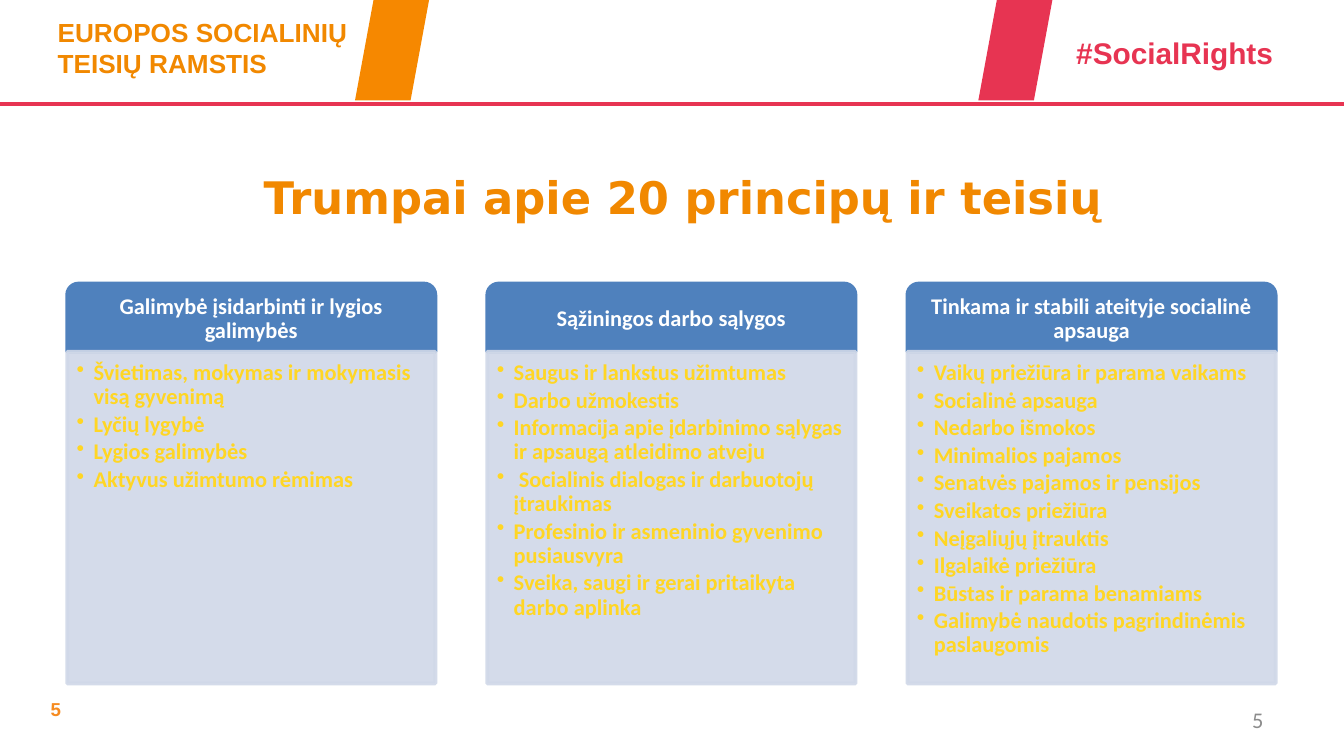
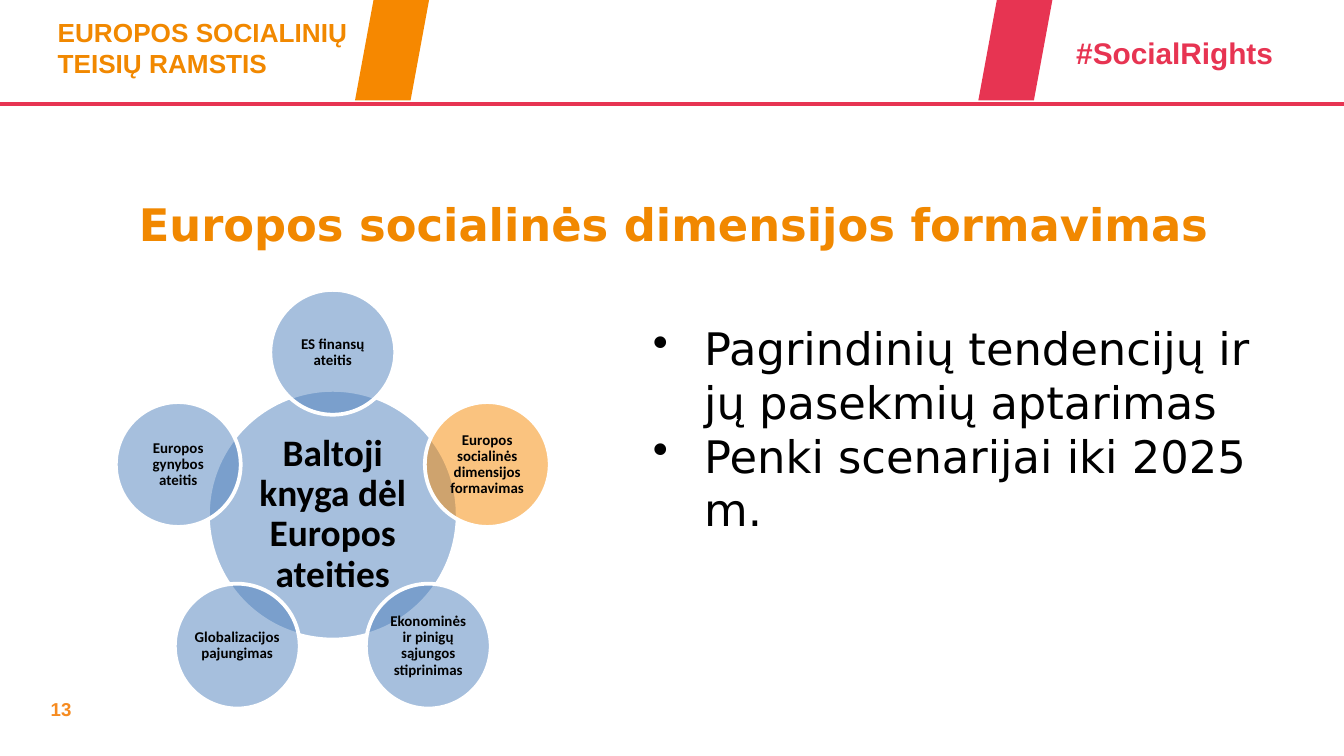
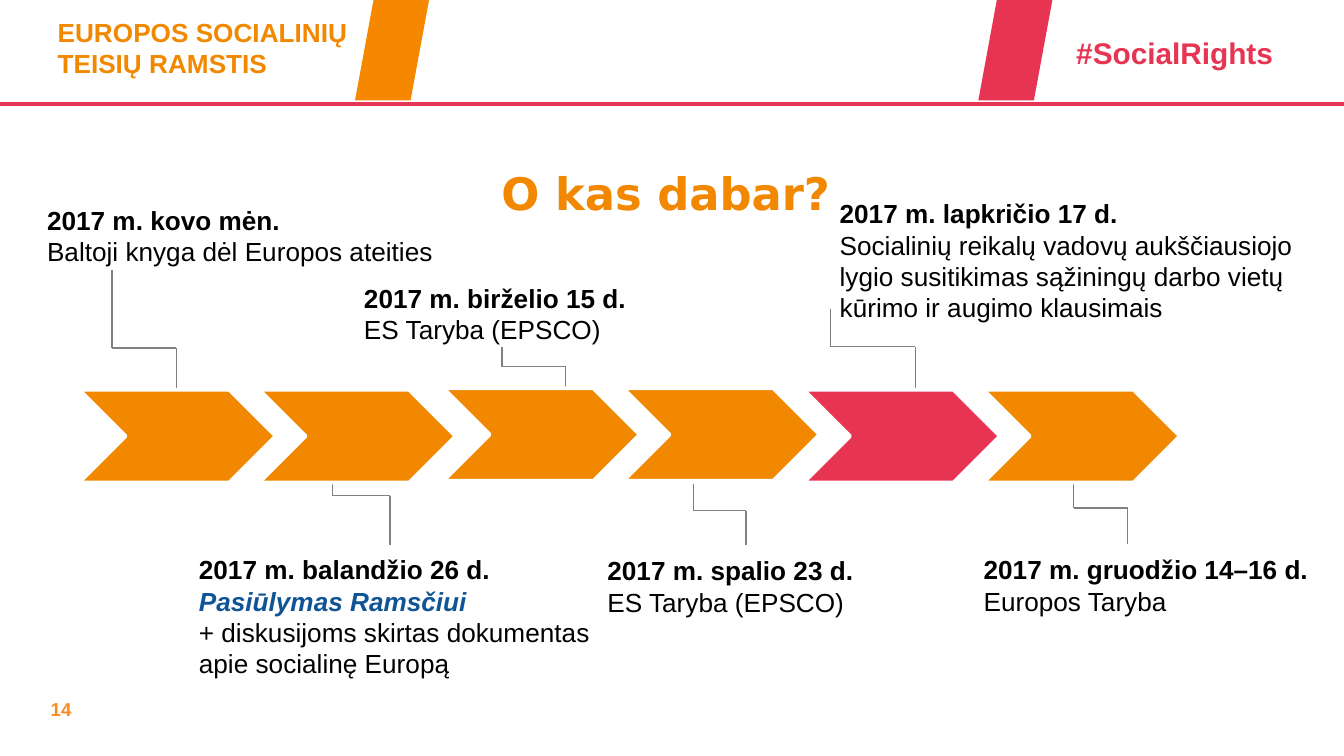
"""Build three slides on the European Pillar of Social Rights."""
from math import cos, radians, sin

from lxml.etree import SubElement
from pptx import Presentation
from pptx.dml.color import RGBColor
from pptx.enum.shapes import MSO_CONNECTOR as Link, MSO_SHAPE as Form
from pptx.enum.text import MSO_ANCHOR as Anchor, PP_ALIGN as Align
from pptx.oxml.ns import qn
from pptx.util import Cm, Pt

WHITE = RGBColor(0xFF, 0xFF, 0xFF)
BLACK = RGBColor(0, 0, 0)
ORANGE = RGBColor(0xF1, 0x88, 0x00)
AMBER = RGBColor(0xF6, 0x88, 0x00)
PEACH = RGBColor(0xF6, 0x8B, 0x20)
PINK = RGBColor(0xE7, 0x34, 0x52)
BLUE = RGBColor(0x4F, 0x81, 0xBD)
PALE = RGBColor(0xD0, 0xD8, 0xE8)
YELLOW = RGBColor(0xFF, 0xD6, 0x24)
NAVY = RGBColor(0x0F, 0x54, 0x94)
GREY = RGBColor(0x80, 0x80, 0x80)
SILVER = RGBColor(0x8C, 0x8C, 0x8C)

TITLE = dict(name="DejaVu Sans", size=Pt(24), bold=True, color=ORANGE)
BODY = dict(name="DejaVu Sans", size=Pt(24), color=BLACK)
BRAND = dict(name="Arial", size=Pt(14), bold=True, color=ORANGE)
TAG = dict(name="Arial", size=Pt(16), bold=True, color=PINK)
FOOT = dict(name="Arial", size=Pt(10), bold=True, color=PEACH)
PAGE = dict(name="Calibri", size=Pt(12), color=SILVER)
HEAD = dict(name="Calibri", size=Pt(12), bold=True, color=WHITE)
ITEM = dict(HEAD, color=YELLOW)
HUB = dict(HEAD, size=Pt(20), color=BLACK)
NODE = dict(HUB, size=Pt(8))
DATE = dict(BRAND, color=BLACK)
NOTE = dict(DATE, bold=False)
OFFER = dict(DATE, italic=True, color=NAVY)

MIDDLE = dict(alignment=Align.CENTER, line_spacing=0.9)
LIST = dict(level=1, line_spacing=0.9, space_after=Pt(1.8))

COLUMNS = [
    ("Galimybė įsidarbinti ir lygios galimybės",
     ["Švietimas, mokymas ir mokymasis visą gyvenimą", "Lyčių lygybė",
      "Lygios galimybės", "Aktyvus užimtumo rėmimas"]),
    ("Sąžiningos darbo sąlygos",
     ["Saugus ir lankstus užimtumas", "Darbo užmokestis",
      "Informacija apie įdarbinimo sąlygas ir apsaugą atleidimo atveju",
      " Socialinis dialogas ir darbuotojų įtraukimas",
      "Profesinio ir asmeninio gyvenimo pusiausvyra",
      "Sveika, saugi ir gerai pritaikyta darbo aplinka"]),
    ("Tinkama ir stabili ateityje socialinė apsauga",
     ["Vaikų priežiūra ir parama vaikams", "Socialinė apsauga",
      "Nedarbo išmokos", "Minimalios pajamos",
      "Senatvės pajamos ir pensijos", "Sveikatos priežiūra",
      "Neįgaliųjų įtrauktis", "Ilgalaikė priežiūra",
      "Būstas ir parama benamiams",
      "Galimybė naudotis pagrindinėmis paslaugomis"]),
]

NODES = [
    ("ES finansų ateitis", BLUE),
    ("Europos socialinės dimensijos formavimas", AMBER),
    ("Ekonominės ir pinigų sąjungos stiprinimas", BLUE),
    ("Globalizacijos pajungimas", BLUE),
    ("Europos gynybos ateitis", BLUE),
]

TRENDS = ["Pagrindinių tendencijų ir jų pasekmių aptarimas",
          "Penki scenarijai iki 2025 m."]

EVENTS = [
    ((0.64, 3.73, 7.85, 1.45), False,
     [("2017 m. kovo mėn.", DATE),
      ("Baltoji knyga dėl Europos ateities", NOTE)]),
    ((3.51, 10.34, 7.9, 2.64), True,
     [("2017 m. balandžio 26 d.", DATE), ("Pasiūlymas Ramsčiui", OFFER),
      ("+ diskusijoms skirtas dokumentas apie socialinę Europą", NOTE)]),
    ((6.63, 5.21, 5.49, 1.45), False,
     [("2017 m. birželio 15 d.", DATE), ("ES Taryba (EPSCO)", NOTE)]),
    ((11.23, 10.36, 5.18, 1.45), False,
     [("2017 m. spalio 23 d.", DATE), ("ES Taryba (EPSCO)", NOTE)]),
    ((15.62, 3.61, 9.37, 2.64), True,
     [("2017 m. lapkričio 17 d.", DATE),
      ("Socialinių reikalų vadovų aukščiausiojo lygio susitikimas "
       "sąžiningų darbo vietų kūrimo ir augimo klausimais", NOTE)]),
    ((18.34, 10.34, 9.37, 1.45), True,
     [("2017 m. gruodžio 14–16 d.", DATE), ("Europos Taryba", NOTE)]),
]

STEPS = [
    (2.12, 5.11, 6.58, 3.33, 7.57),
    (6.28, 8.76, 9.37, 7.37, 10.31),
    (9.49, 6.55, 6.93, 10.69, 7.95),
    (13.11, 9.14, 9.65, 14.1, 10.31),
    (15.7, 5.84, 6.55, 17.3, 7.57),
    (20.29, 9.09, 9.6, 21.31, 10.29),
]


def apply(item, values):
    """Set each named attribute on the item."""
    for name, value in values.items():
        setattr(item, name, value)


def fade(part, alpha):
    """Give the solid colour of a fill or line an opacity in percent."""
    for color in part.iter(qn("a:srgbClr")):
        SubElement(color, qn("a:alpha"), val=str(alpha * 1000))


def bullet(para, indent):
    """Give the paragraph a hanging round bullet."""
    props = para._p.get_or_add_pPr()
    props.set("marL", str(Cm(indent)))
    props.set("indent", str(-Cm(indent)))
    SubElement(props, qn("a:buChar"), char="•")


def write(shape, lines, layout=None, indent=0, pads=None,
          anchor=Anchor.TOP, wrap=True):
    """Fill the shape with lines of (text, font)."""
    frame = shape.text_frame
    apply(frame, dict(word_wrap=wrap, vertical_anchor=anchor))
    if pads:
        sides = ("margin_left", "margin_top", "margin_right", "margin_bottom")
        apply(frame, {side: Cm(pad) for side, pad in zip(sides, pads)})
    for i, (text, font) in enumerate(lines):
        para = frame.add_paragraph() if i else frame.paragraphs[0]
        if indent:
            bullet(para, indent)
        apply(para, layout or dict(alignment=Align.LEFT))
        run = para.add_run()
        run.text = text
        apply(run.font, {k: v for k, v in font.items() if k != "color"})
        run.font.color.rgb = font["color"]


def label(slide, at, lines, **format):
    """Add a text box."""
    write(slide.shapes.add_textbox(*map(Cm, at)), lines, **format)


def block(slide, form, at, fill, line=None, alpha=100):
    """Add a flat preset shape."""
    shape = slide.shapes.add_shape(form, *map(Cm, at))
    shape.shadow.inherit = False
    shape.fill.solid()
    shape.fill.fore_color.rgb = fill
    if alpha < 100:
        fade(shape._element.spPr, alpha)
    if line is None:
        shape.line.fill.background()
    else:
        shape.line.color.rgb = line
        shape.line.width = Pt(2)
    return shape


def rule(slide, start, end, color, width):
    """Add a straight line."""
    line = slide.shapes.add_connector(Link.STRAIGHT, *map(Cm, start + end))
    line.line.color.rgb = color
    line.line.width = Pt(width)
    SubElement(line._element.spPr, qn("a:effectLst"))


def start(deck, page, title, at):
    """Add a slide with the shared band, footer and title."""
    slide = deck.slides.add_slide(deck.slide_layouts[6])
    label(slide, (0.71, 13.06, 5.54, 0.69), [(page, FOOT)])
    label(slide, (0.84, 0.18, 6.45, 1.45),
          [("EUROPOS SOCIALINIŲ TEISIŲ RAMSTIS", BRAND)])
    rule(slide, (0, 1.96), (25.4, 1.96), PINK, 2.25)
    label(slide, (20.09, 0.53, 4.39, 0.94), [("#SocialRights", TAG)])
    for left, color in ((6.71, AMBER), (18.49, PINK)):
        block(slide, Form.PARALLELOGRAM, (left, 0, 1.4, 1.9), color)
    label(slide, at, [(title, TITLE)], anchor=Anchor.MIDDLE,
          layout=dict(alignment=Align.CENTER))
    return slide


def column(slide, left, head, items):
    """Add a headed list panel."""
    top = block(slide, Form.ROUND_2_SAME_RECTANGLE,
                (left, 5.36, 6.96, 1.29), BLUE, BLUE)
    write(top, [(head, HEAD)], MIDDLE, pads=(0.23, 0.13, 0.23, 0.13),
          anchor=Anchor.MIDDLE)
    panel = block(slide, Form.RECTANGLE, (left, 6.65, 6.96, 6.27),
                  PALE, PALE, 90)
    fade(panel.line._ln, 90)
    write(panel, [(item, ITEM) for item in items],
          dict(LIST, alignment=Align.LEFT), 0.32, (0.18, 0.18, 0.23, 0.25))


def disc(slide, x, y, size, text, font, color, pad):
    """Add a translucent circle centred on a point."""
    at = (x - size / 2, y - size / 2, size, size)
    shape = block(slide, Form.OVAL, at, color, WHITE, 50)
    write(shape, [(text, font)], MIDDLE, pads=[pad] * 4,
          anchor=Anchor.MIDDLE)


def rights(deck):
    """Add the slide of rights in three columns."""
    slide = start(deck, "5", "Trumpai apie 20 principų ir teisių",
                  (0.41, 2.74, 24.99, 1.96))
    label(slide, (18.21, 13.23, 5.92, 0.76), [("5", PAGE)],
          layout=dict(alignment=Align.RIGHT), anchor=Anchor.MIDDLE)
    for i, (head, items) in enumerate(COLUMNS):
        column(slide, 1.27 + 7.94 * i, head, items)


def future(deck):
    """Add the slide of papers around a hub."""
    slide = start(deck, "13", "Europos socialinės dimensijos formavimas",
                  (1.3, 3.25, 22.86, 1.96))
    x, y, orbit = 6.29, 9.73, 3.07
    disc(slide, x, y, 4.72, "Baltoji knyga dėl Europos ateities",
         HUB, BLUE, 0.06)
    for i, (text, color) in enumerate(NODES):
        turn = radians(360 / len(NODES) * i)
        disc(slide, x + orbit * sin(turn), y - orbit * cos(turn), 2.36,
             text, NODE, color, 0.03)
    label(slide, (12.09, 5.94, 11.81, 6.4),
          [(text, BODY) for text in TRENDS], indent=0.97)


def agenda(deck):
    """Add the timeline slide."""
    slide = start(deck, "14", "O kas dabar? ", (1.3, 2.74, 22.86, 1.8))
    for x1, y1, y2, x2, y3 in STEPS:
        bends = [(x1, y1), (x1, y2), (x2, y2), (x2, y3)]
        for a, b in zip(bends, bends[1:]):
            rule(slide, a, b, GREY, 0.75)
    for left, top, pair in ((1.5, 7.37, (ORANGE, ORANGE)),
                            (8.38, 7.34, (ORANGE, ORANGE)),
                            (15.19, 7.37, (PINK, ORANGE))):
        for i, color in enumerate(pair):
            block(slide, Form.CHEVRON, (left + 3.4 * i, top, 3.71, 1.75),
                  color, WHITE)
    for at, wrap, lines in EVENTS:
        label(slide, at, lines, wrap=wrap)


def main():
    """Build and save the deck."""
    deck = Presentation()
    apply(deck, dict(slide_width=Cm(25.4), slide_height=Cm(14.29)))
    rights(deck)
    future(deck)
    agenda(deck)
    deck.save("out.pptx")


if __name__ == "__main__":
    main()
